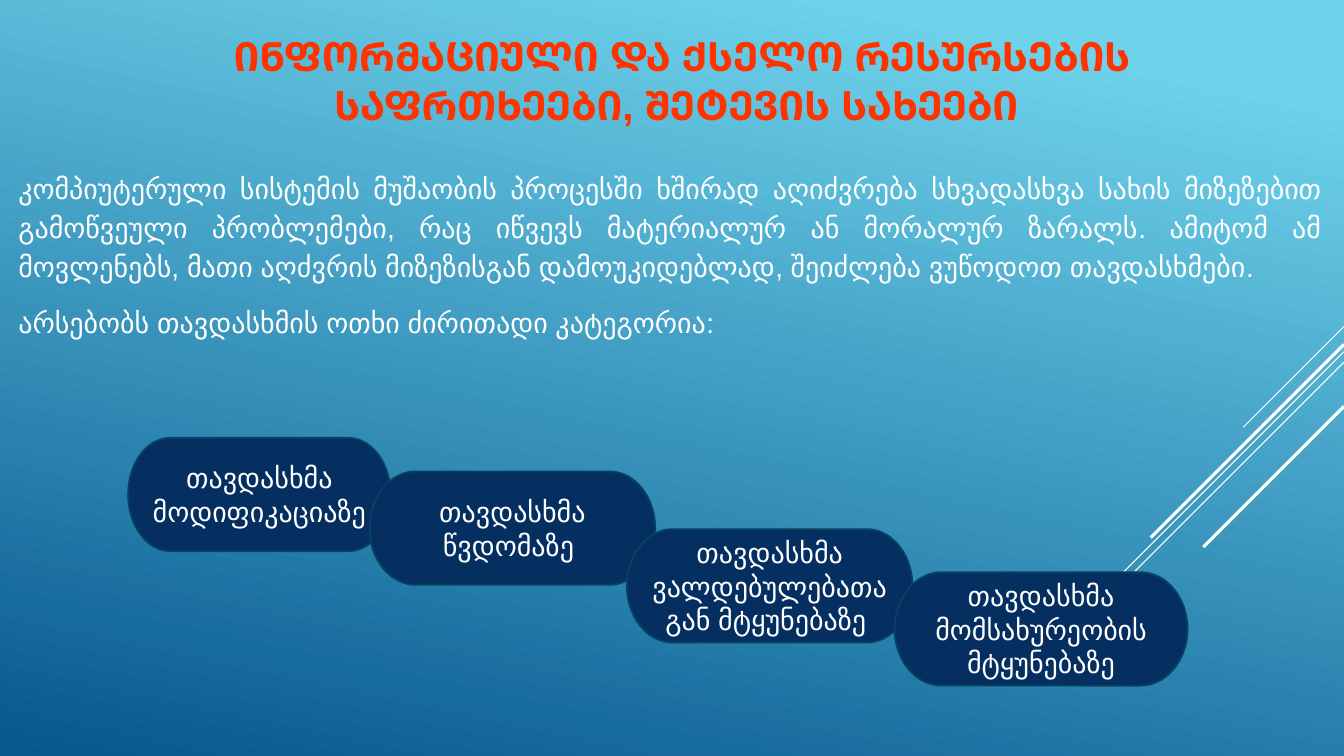
from lxml import etree
from pptx import Presentation
from pptx.dml.color import RGBColor
from pptx.enum.shapes import MSO_CONNECTOR, MSO_SHAPE
from pptx.enum.text import MSO_ANCHOR, PP_ALIGN
from pptx.oxml.ns import qn
from pptx.util import Emu, Pt

STRAIGHT = MSO_CONNECTOR.STRAIGHT
TERMINATOR = MSO_SHAPE.FLOWCHART_TERMINATOR
TOP, MIDDLE = MSO_ANCHOR.TOP, MSO_ANCHOR.MIDDLE
CENTER, JUSTIFY = PP_ALIGN.CENTER, PP_ALIGN.JUSTIFY

EMU_PER_PX = 9525
WIDTH, HEIGHT = 1280, 720
FONT = "Arial"
WHITE, ORANGE, NAVY, TEAL = "FFFFFF", "FF3300", "052F61", "054361"
SKY, OCEAN = "6ED2EB", "06588E"

TITLE = "ᲘᲜᲤᲝᲠᲛᲐᲪᲘᲣᲚᲘ ᲓᲐ ᲥᲡᲔᲚᲝ ᲠᲔᲡᲣᲠᲡᲔᲑᲘᲡ ᲡᲐᲤᲠᲗᲮᲔᲔᲑᲘ, ᲨᲔᲢᲔᲕᲘᲡ ᲡᲐᲮᲔᲔᲑᲘ "
BODY = [
    "კომპიუტერული სისტემის მუშაობის პროცესში ხშირად აღიძვრება სხვადასხვა "
    "სახის მიზეზებით გამოწვეული პრობლემები, რაც იწვევს მატერიალურ ან მორალურ "
    "ზარალს. ამიტომ ამ მოვლენებს, მათი აღძვრის მიზეზისგან დამოუკიდებლად, "
    "შეიძლება ვუწოდოთ თავდასხმები. ",
    "არსებობს თავდასხმის ოთხი ძირითადი კატეგორია: ",
]
ATTACKS = [
    (122, 417, 250, "თავდასხმა მოდიფიკაციაზე "),
    (352, 449, 272, "თავდასხმა წვდომაზე "),
    (597, 504, 272, "თავდასხმა ვალდებულებათაგან მტყუნებაზე "),
    (852, 545, 279, "თავდასხმა მომსახურეობის მტყუნებაზე"),
]
ATTACK_HEIGHT = 108
RAYS = [(311, 96, 0.75), (335, 313, 0.75), (345, 199, 0.75),
        (328, 184, 2.25), (387, 134, 2.25)]


def px(*lengths):
    return [Emu(length * EMU_PER_PX) for length in lengths]


def color(code):
    return RGBColor.from_string(code)


def paint_background(page):
    fill = page.background.fill
    fill.gradient()
    fill.gradient_angle = 360 - 102
    for stop, position, code in zip(fill.gradient_stops, (0.1, 1), (SKY, OCEAN)):
        stop.position = position
        stop.color.rgb = color(code)


def add_ray(page, top, reach, weight):
    ray = page.shapes.add_connector(
        STRAIGHT, *px(WIDTH, top, WIDTH - reach, top + reach))
    ray.line.color.rgb = color(WHITE)
    ray.line.width = Pt(weight)
    etree.SubElement(ray._element.spPr, qn("a:effectLst"))


def write(box, texts, size, code=WHITE, bold=False, align=CENTER,
          anchor=MIDDLE, spacing=1, gap=0):
    frame = box.text_frame
    frame.word_wrap = True
    frame.vertical_anchor = anchor
    for index, text in enumerate(texts):
        para = frame.add_paragraph() if index else frame.paragraphs[0]
        para.alignment = align
        para.line_spacing = spacing
        para.space_before = Pt(gap if index else 0)
        span = para.add_run()
        span.text = text
        span.font.name = FONT
        span.font.size = Pt(size)
        span.font.bold = bold
        span.font.color.rgb = color(code)


def add_text(page, left, top, width, height, texts, size, **style):
    box = page.shapes.add_textbox(*px(left, top, width, height))
    write(box, texts, size, **style)


def add_attack(page, left, top, width, text):
    box = page.shapes.add_shape(TERMINATOR, *px(left, top, width, ATTACK_HEIGHT))
    box.shadow.inherit = False
    box.fill.solid()
    box.fill.fore_color.rgb = color(NAVY)
    box.line.color.rgb = color(TEAL)
    box.line.width = Pt(1.25)
    write(box, [text], 20)


def main():
    deck = Presentation()
    deck.slide_width, deck.slide_height = px(WIDTH, HEIGHT)
    page = deck.slides.add_slide(deck.slide_layouts[6])
    paint_background(page)
    for ray in RAYS:
        add_ray(page, *ray)
    add_text(page, 150, 22, 999, 108, [TITLE], 28.8, code=ORANGE, bold=True)
    add_text(page, 8, 154, 1260, 214, BODY, 20, align=JUSTIFY, anchor=TOP,
             spacing=1.15, gap=13)
    for attack in ATTACKS:
        add_attack(page, *attack)
    deck.save("out.pptx")


if __name__ == "__main__":
    main()
